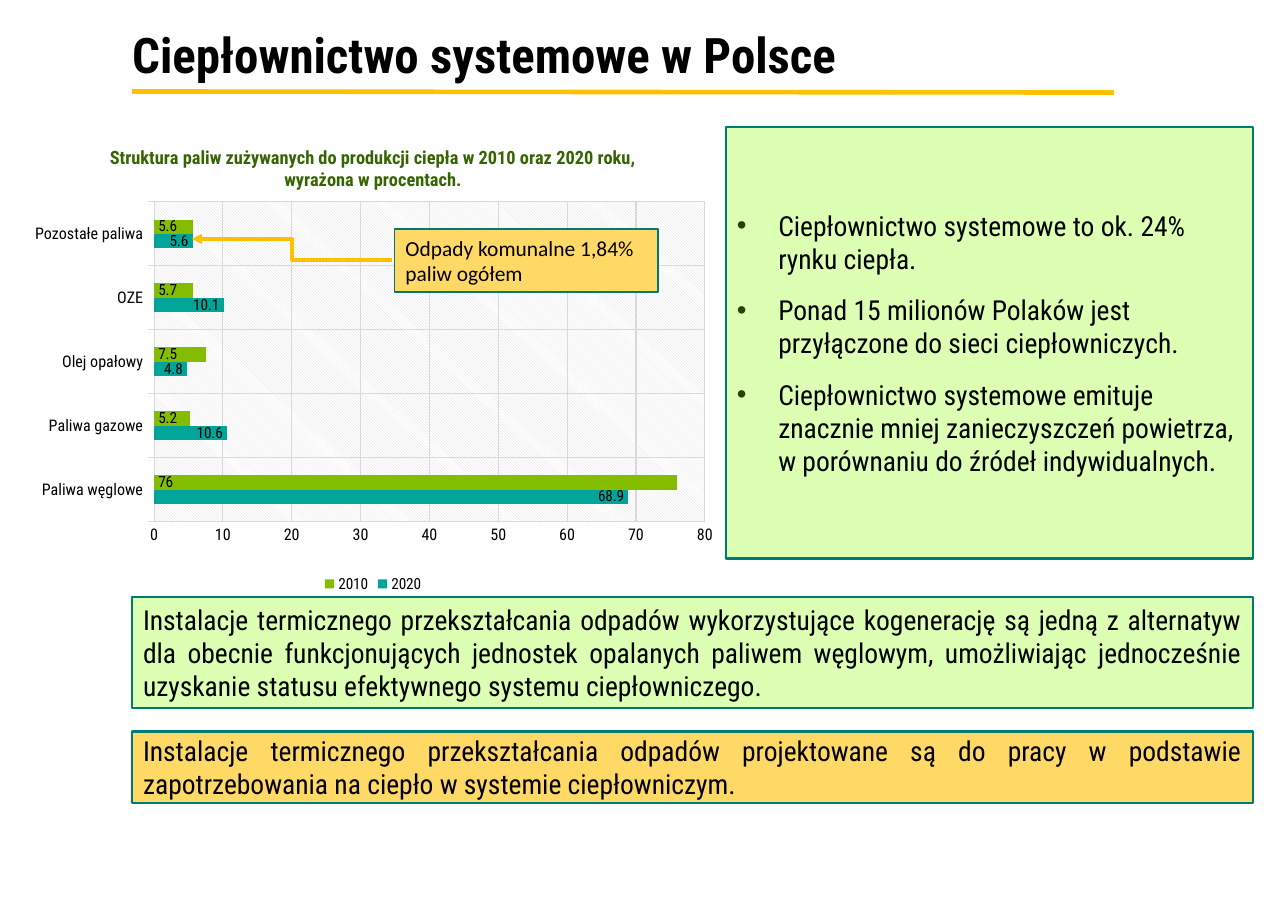
from lxml import etree
from pptx import Presentation
from pptx.chart.data import CategoryChartData
from pptx.dml.color import RGBColor
from pptx.enum.chart import XL_CHART_TYPE, XL_LABEL_POSITION, XL_LEGEND_POSITION, XL_TICK_MARK
from pptx.enum.shapes import MSO_CONNECTOR, MSO_SHAPE
from pptx.enum.text import MSO_ANCHOR, PP_ALIGN
from pptx.oxml import parse_xml
from pptx.oxml.ns import nsdecls, qn
from pptx.util import Pt

BAR_CLUSTERED = XL_CHART_TYPE.BAR_CLUSTERED
INSIDE_END, INSIDE_BASE = XL_LABEL_POSITION.INSIDE_END, XL_LABEL_POSITION.INSIDE_BASE
BOTTOM = XL_LEGEND_POSITION.BOTTOM
TICK_NONE, TICK_OUT = XL_TICK_MARK.NONE, XL_TICK_MARK.OUTSIDE
STRAIGHT, ELBOW = MSO_CONNECTOR.STRAIGHT, MSO_CONNECTOR.ELBOW
TOP, MIDDLE = MSO_ANCHOR.TOP, MSO_ANCHOR.MIDDLE
LEFT, JUSTIFY = PP_ALIGN.LEFT, PP_ALIGN.JUSTIFY

BLACK = RGBColor(0x00, 0x00, 0x00)
GOLD = RGBColor(0xFF, 0xC0, 0x00)
PALE_GOLD = RGBColor(0xFF, 0xD9, 0x66)
PALE_GREEN = RGBColor(0xDC, 0xFF, 0xB4)
DARK_TEAL = RGBColor(0x00, 0x7B, 0x73)
TEAL = RGBColor(0x00, 0xA4, 0x99)
LIME = RGBColor(0x84, 0xBD, 0x00)
TITLE_GREEN = RGBColor(0x35, 0x65, 0x00)
BULLET_GREEN = RGBColor(0x24, 0x43, 0x00)
GRID_GREY = RGBColor(0xD9, 0xD9, 0xD9)

HEADING = {"name": "Roboto Condensed", "size": Pt(32), "bold": True}
BODY = {"name": "Roboto Condensed", "size": Pt(18), "bold": False}
CALLOUT = {"name": "Calibri", "size": Pt(14), "bold": False}
CHART_TEXT = {"name": "Roboto Condensed", "size": Pt(10), "bold": False}
AXIS_TEXT = {**CHART_TEXT, "size": Pt(10.5)}
CHART_TITLE = {"name": "Roboto Condensed", "size": Pt(12), "bold": True}


def format_font(font, values, color=BLACK):
    for attribute, value in values.items():
        setattr(font, attribute, value)
    font.color.rgb = color


def write(shape, texts, values, align=LEFT, anchor=MIDDLE, spacing=0, bullets=False):
    frame = shape.text_frame
    frame.word_wrap = True
    frame.vertical_anchor = anchor
    for index, text in enumerate(texts):
        paragraph = frame.add_paragraph() if index else frame.paragraphs[0]
        paragraph.text = text
        paragraph.alignment = align
        paragraph.space_before = Pt(spacing if index else 0)
        paragraph.space_after = Pt(spacing)
        if bullets:
            properties = paragraph._p.get_or_add_pPr()
            properties.set("marL", str(Pt(27)))
            properties.set("indent", str(-Pt(27)))
            bullet_color = etree.SubElement(properties, qn("a:buClr"))
            etree.SubElement(bullet_color, qn("a:srgbClr"), val=str(BULLET_GREEN))
            etree.SubElement(properties, qn("a:buFont"), typeface="Arial")
            etree.SubElement(properties, qn("a:buChar"), char="•")
        format_font(paragraph.font, values)


prs = Presentation()
prs.slide_width, prs.slide_height = Pt(841.68), Pt(595.44)
slide = prs.slides.add_slide(prs.slide_layouts[6])
shapes = slide.shapes

# Heading
heading = shapes.add_textbox(Pt(86.4), Pt(31), Pt(687.6), Pt(13.7))
for side in ("left", "right", "top", "bottom"):
    setattr(heading.text_frame, f"margin_{side}", 0)
write(heading, ["Ciepłownictwo systemowe w Polsce"], HEADING)
heading.text_frame.paragraphs[0].line_spacing = 0.9

# Fuel structure chart
fuel_data = CategoryChartData()
fuel_data.categories = ["Paliwa węglowe", "Paliwa gazowe", "Olej opałowy", "OZE", "Pozostałe paliwa"]
fuel_data.add_series("2020", [68.9, 10.6, 4.8, 10.1, 5.6])
fuel_data.add_series("2010", [76, 5.2, 7.5, 5.7, 5.6])
chart = shapes.add_chart(BAR_CLUSTERED, Pt(13), Pt(82.8), Pt(461.5), Pt(307.4), fuel_data).chart
format_font(chart.font, CHART_TEXT)

chart.has_title = True
chart_title = chart.chart_title.text_frame.paragraphs[0]
chart_title.text = "Struktura paliw zużywanych do produkcji ciepła w 2010 oraz 2020 roku, wyrażona w procentach."
format_font(chart_title.runs[0].font, CHART_TITLE, TITLE_GREEN)
chart.chart_title.include_in_layout = False

chart.has_legend = True
chart.legend.position = BOTTOM
chart.legend.include_in_layout = False
format_font(chart.legend.font, CHART_TEXT)

fuel_bars = chart.plots[0]
fuel_bars.gap_width, fuel_bars.overlap = 247, 0
fuel_bars.vary_by_categories = False
for year, color, position in zip(fuel_bars.series, (TEAL, LIME), (INSIDE_END, INSIDE_BASE)):
    year.format.fill.solid()
    year.format.fill.fore_color.rgb = color
    year.invert_if_negative = False
    year.data_labels.show_value = True
    year.data_labels.position = position
    format_font(year.data_labels.font, CHART_TEXT)

for axis, tick in ((chart.category_axis, TICK_OUT), (chart.value_axis, TICK_NONE)):
    axis.major_tick_mark, axis.minor_tick_mark = tick, TICK_NONE
    axis.has_major_gridlines = True
    format_font(axis.tick_labels.font, AXIS_TEXT)
    for line in (axis.format.line, axis.major_gridlines.format.line):
        line.color.rgb = GRID_GREY
        line.width = Pt(0.75)
chart.value_axis.format.line.fill.background()
percent_scale = {"minimum_scale": 0, "maximum_scale": 80, "major_unit": 10}
for attribute, value in percent_scale.items():
    setattr(chart.value_axis, attribute, value)

# Plot area: fixed place and hatched background
plot_area = chart._chartSpace.chart.plotArea
for old_layout in plot_area.findall(qn("c:layout")):
    plot_area.remove(old_layout)
layout = etree.Element(qn("c:layout"))
manual = etree.SubElement(layout, qn("c:manualLayout"))
for tag, value in (("layoutTarget", "inner"), ("xMode", "edge"), ("yMode", "edge"),
                   ("x", "0.19"), ("y", "0.16"), ("w", "0.78"), ("h", "0.68")):
    etree.SubElement(manual, qn(f"c:{tag}"), val=value)
plot_area.insert(0, layout)
plot_area.append(parse_xml(
    f'<c:spPr {nsdecls("c", "a")}><a:pattFill prst="ltDnDiag">'
    f'<a:fgClr><a:srgbClr val="{GRID_GREY}"/></a:fgClr>'
    '<a:bgClr><a:srgbClr val="FFFFFF"/></a:bgClr></a:pattFill></c:spPr>'))

# Text panels: place, fill, outline, texts, text format
facts = [
    "Ciepłownictwo systemowe to ok. 24% rynku ciepła.",
    "Ponad 15 milionów Polaków jest przyłączone do sieci ciepłowniczych.",
    "Ciepłownictwo systemowe emituje znacznie mniej zanieczyszczeń powietrza, "
    "w porównaniu do źródeł indywidualnych.",
]
alternative = [
    "Instalacje termicznego przekształcania odpadów wykorzystujące kogenerację są jedną z alternatyw "
    "dla obecnie funkcjonujących jednostek opalanych paliwem węglowym, umożliwiając jednocześnie "
    "uzyskanie statusu efektywnego systemu ciepłowniczego."
]
base_load = [
    "Instalacje termicznego przekształcania odpadów projektowane są do pracy w podstawie "
    "zapotrzebowania na ciepło w systemie ciepłowniczym."
]
waste_share = ["Odpady komunalne 1,84% paliw ogółem"]
justified = {"values": BODY, "align": JUSTIFY, "spacing": 6}
panels = [
    ((474.5, 82.8, 344.2, 282.2), PALE_GREEN, 1.5, facts, {"values": BODY, "spacing": 6, "bullets": True}),
    ((86.4, 390.2, 732.3, 72.7), PALE_GREEN, 1.5, alternative, justified),
    ((257.8, 149.8, 172.1, 41), PALE_GOLD, 1.25, waste_share, {"values": CALLOUT, "anchor": TOP}),
    ((86.4, 478.1, 732.3, 46.8), PALE_GOLD, 1.5, base_load, justified),
]
for place, fill, outline, texts, text_format in panels:
    panel = shapes.add_shape(MSO_SHAPE.RECTANGLE, *map(Pt, place))
    panel.shadow.inherit = False
    panel.fill.solid()
    panel.fill.fore_color.rgb = fill
    panel.line.color.rgb = DARK_TEAL
    panel.line.width = Pt(outline)
    write(panel, texts, **text_format)

# Heading rule and callout arrow
for kind, ends, width, has_arrow in (
    (STRAIGHT, (86.4, 59.8, 727.9, 60.5), 3, False),
    (ELBOW, (256.3, 169.9, 125.3, 156.2), 2.25, True),
):
    connector = shapes.add_connector(kind, *map(Pt, ends))
    connector.line.color.rgb = GOLD
    connector.line.width = Pt(width)
    if has_arrow:
        etree.SubElement(connector.line._get_or_add_ln(), qn("a:tailEnd"), type="triangle")
    etree.SubElement(connector._element.spPr, qn("a:effectLst"))

prs.save("out.pptx")
